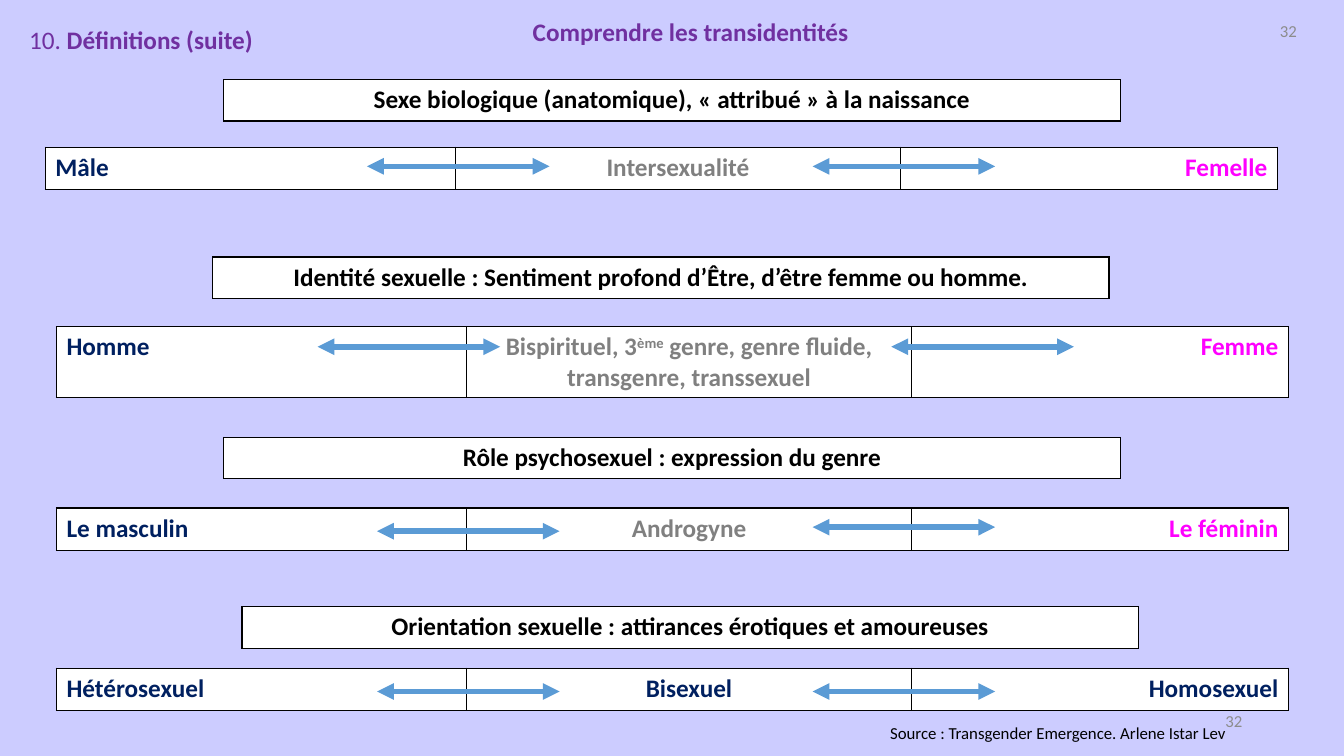
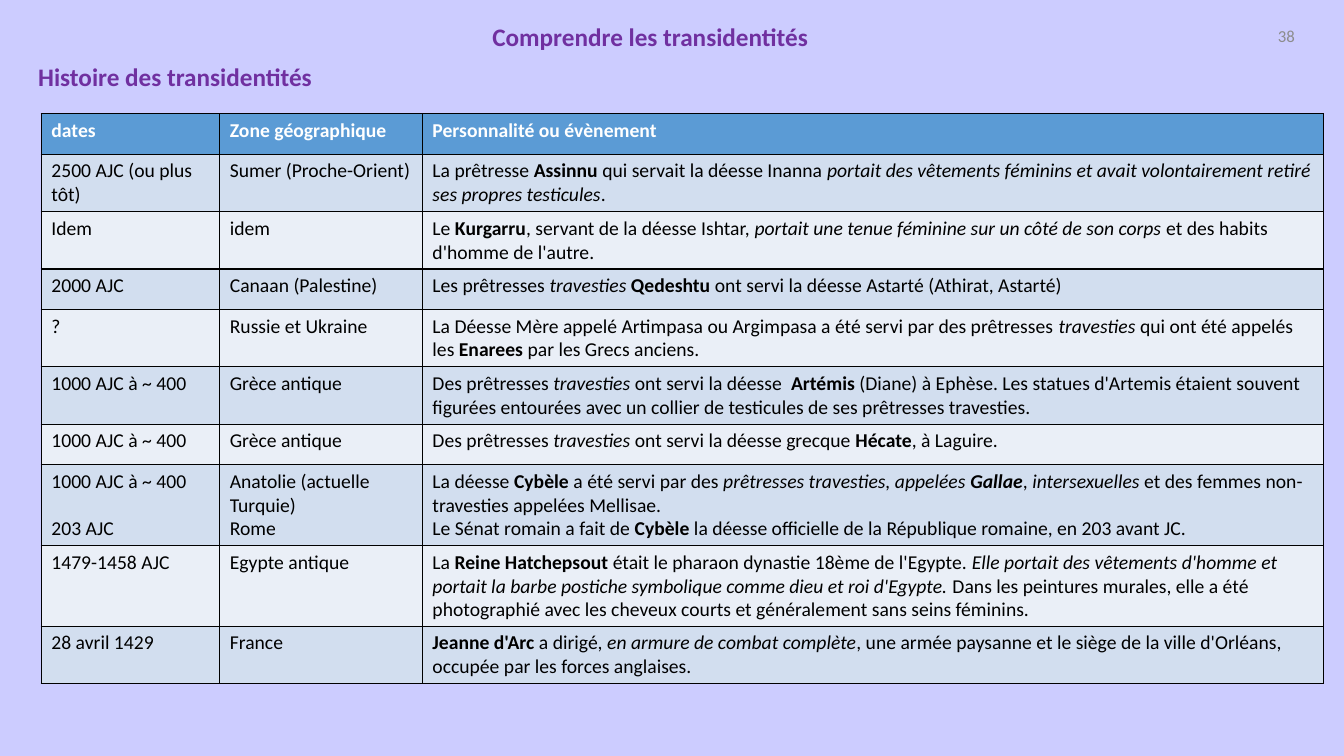
from dataclasses import dataclass

from lxml import etree
from pptx import Presentation
from pptx.dml.color import RGBColor
from pptx.enum.shapes import MSO_CONNECTOR
from pptx.enum.text import MSO_ANCHOR, PP_ALIGN
from pptx.oxml.ns import qn
from pptx.util import Inches, Pt

LEFT, CENTER, RIGHT = PP_ALIGN.LEFT, PP_ALIGN.CENTER, PP_ALIGN.RIGHT
TOP, MIDDLE = MSO_ANCHOR.TOP, MSO_ANCHOR.MIDDLE
STRAIGHT = MSO_CONNECTOR.STRAIGHT


@dataclass(frozen=True)
class Theme:
    font: str = "Calibri"
    background: str = "CCCCFF"
    title: str = "7030A0"
    number: str = "8C8C8C"
    ink: str = "000000"
    paper: str = "FFFFFF"
    navy: str = "002060"
    grey: str = "808080"
    pink: str = "FF00FF"
    blue: str = "5B9BD5"
    stripes: tuple = ("D2DEEF", "EAEFF7")
    heading_size: int = 18
    table_size: int = 14
    small_size: int = 12
    border: int = 1
    arrow: int = 4


THEME = Theme()

# In all texts: *bold*, _italic_, ^superscript^
DECK_TITLE = "*Comprendre les transidentités*"

SCALE_COLUMNS = (4.07, 4.41, 3.74)
HEADING_WIDTH, HEADING_HEIGHT = 8.89, 0.41
ARROW_LENGTH = 1.81
GENDERED = (THEME.navy, THEME.grey, THEME.pink)
NEUTRAL = (THEME.navy,) * 3

# heading, its left and top; scale left, top, height; labels, colours; arrow starts
SCALES = [
    ("Sexe biologique (anatomique), « attribué » à la naissance", 2.22, 0.79,
     0.45, 1.46, 0.42, ("Mâle", "Intersexualité", "Femelle"), GENDERED,
     [(3.64, 1.65), (8.06, 1.65)]),
    ("Identité sexuelle : Sentiment profond d’Être, d’être femme ou homme.", 2.11, 2.55,
     0.56, 3.24, 0.7,
     ("Homme", "Bispirituel, 3^ème^ genre, genre fluide, transgenre, transsexuel", "Femme"),
     GENDERED, [(3.15, 3.44), (8.84, 3.44)]),
    ("Rôle psychosexuel : expression du genre", 2.22, 4.34,
     0.56, 5.04, 0.42, ("Le masculin", "Androgyne", "Le féminin"), GENDERED,
     [(3.74, 5.27), (8.06, 5.23)]),
    ("Orientation sexuelle : attirances érotiques et amoureuses", 2.4, 6.02,
     0.56, 6.63, 0.42, ("Hétérosexuel", "Bisexuel", "Homosexuel"), NEUTRAL,
     [(3.74, 6.86), (8.06, 6.86)]),
]

HISTORY_COLUMNS = (1.77, 2.01, 8.94)
HISTORY_HEADER = ("*dates*", "*Zone géographique*", "*Personnalité ou évènement*")
ONE_LINE, TWO_LINES, THREE_LINES = 0.4, 0.57, 0.8
HISTORY = [
    (TWO_LINES, "2500 AJC (ou plus tôt)", "Sumer (Proche-Orient)",
     "La prêtresse *Assinnu* qui servait la déesse Inanna _portait des vêtements féminins "
     "et avait volontairement retiré ses propres testicules_."),
    (TWO_LINES, "Idem", "idem",
     "Le *Kurgarru*, servant de la déesse Ishtar, _portait une tenue féminine sur un côté "
     "de son corps _et des habits d'homme de l'autre."),
    (ONE_LINE, "2000 AJC", "Canaan (Palestine)",
     "Les prêtresses _travesties _*Qedeshtu* ont servi la déesse Astarté (Athirat, Astarté)"),
    (TWO_LINES, "?", "Russie et Ukraine",
     "La Déesse Mère appelé Artimpasa ou Argimpasa a été servi par des prêtresses "
     "_travesties_ qui ont été appelés les *Enarees* par les Grecs anciens."),
    (TWO_LINES, "1000 AJC à ~ 400", "Grèce antique",
     "Des prêtresses _travesties_ ont servi la déesse  *Artémis* (Diane) à Ephèse. Les "
     "statues d'Artemis étaient souvent figurées entourées avec un collier de testicules "
     "de ses prêtresses travesties."),
    (ONE_LINE, "1000 AJC à ~ 400", "Grèce antique",
     "Des prêtresses _travesties_ ont servi la déesse grecque *Hécate*, à Laguire."),
    (THREE_LINES, "1000 AJC à ~ 400\n203 AJC", "Anatolie (actuelle Turquie)\nRome",
     "La déesse *Cybèle* a été servi par des _prêtresses travesties, appelées *Gallae*_, "
     "_intersexuelles_ et des femmes non-travesties appelées Mellisae.\n"
     "Le Sénat romain a fait de *Cybèle* la déesse officielle de la République romaine, "
     "en 203 avant JC."),
    (THREE_LINES, "1479-1458 AJC", "Egypte antique",
     "La *Reine Hatchepsout *était le pharaon dynastie 18ème de l'Egypte. _Elle portait "
     "des vêtements d'homme et portait la barbe postiche symbolique comme dieu et roi "
     "d'Egypte. _Dans les peintures murales, elle a été photographié avec les cheveux "
     "courts et généralement sans seins féminins."),
    (TWO_LINES, "28 avril 1429", "France",
     "*Jeanne d'Arc *a dirigé, _en armure de combat complète_, une armée paysanne et le "
     "siège de la ville d'Orléans, occupée par les forces anglaises."),
]


def rgb(color):
    return RGBColor.from_string(color)


def split_marks(text):
    """Yield each stretch of text with the set of marks open around it."""
    marks, stretch = set(), ""
    for letter in text:
        if letter in "*_^":
            if stretch:
                yield stretch, set(marks)
            marks ^= {letter}
            stretch = ""
        else:
            stretch += letter
    if stretch:
        yield stretch, marks


def write(frame, text, *, size=THEME.heading_size, color=THEME.ink, align=LEFT, gap=0):
    """Fill a text frame; gap is the space in points between paragraphs."""
    for index, line in enumerate(text.split("\n")):
        para = frame.add_paragraph() if index else frame.paragraphs[0]
        para.alignment = align
        if index and gap:
            para.space_before = Pt(gap)
        for stretch, marks in split_marks(line):
            span = para.add_run()
            span.text = stretch
            font = span.font
            font.name, font.size = THEME.font, Pt(size)
            font.color.rgb = rgb(color)
            font.bold, font.italic = "*" in marks, "_" in marks
            if "^" in marks:
                span._r.get_or_add_rPr().set("baseline", "30000")


def add_text(page, text, left, top, width, height=0.4, *, anchor=TOP, wrap=True, **style):
    box = page.shapes.add_textbox(Inches(left), Inches(top), Inches(width), Inches(height))
    box.text_frame.word_wrap = wrap
    box.text_frame.vertical_anchor = anchor
    write(box.text_frame, text, **style)


def add_number(page, number, left, top, width):
    add_text(page, number, left, top, width, anchor=MIDDLE, size=THEME.small_size,
             color=THEME.number, align=RIGHT)


def add_title(page, left, top, width):
    add_text(page, DECK_TITLE, left, top, width, color=THEME.title, align=CENTER)


def add_grid(page, left, top, columns, heights):
    """Add an empty table with the given column widths and row heights."""
    table = page.shapes.add_table(
        len(heights), len(columns), Inches(left), Inches(top),
        Inches(sum(columns)), Inches(sum(heights))).table
    for column, width in zip(table.columns, columns):
        column.width = Inches(width)
    for row, height in zip(table.rows, heights):
        row.height = Inches(height)
    return table


def fill_cell(cell, text, fill, **style):
    properties = cell._tc.get_or_add_tcPr()
    for side in ("a:lnL", "a:lnR", "a:lnT", "a:lnB"):
        line = etree.SubElement(properties, qn(side), w=str(Pt(THEME.border)))
        solid = etree.SubElement(line, qn("a:solidFill"))
        etree.SubElement(solid, qn("a:srgbClr"), val=THEME.ink)
    cell.fill.solid()
    cell.fill.fore_color.rgb = rgb(fill)
    write(cell.text_frame, text, **style)


def add_double_arrow(page, left, top):
    arrow = page.shapes.add_connector(
        STRAIGHT, Inches(left), Inches(top), Inches(left + ARROW_LENGTH), Inches(top))
    arrow.line.color.rgb = rgb(THEME.blue)
    arrow.line.width = Pt(THEME.arrow)
    line = arrow.line._get_or_add_ln()
    for end in ("a:headEnd", "a:tailEnd"):
        etree.SubElement(line, qn(end), type="triangle")
    etree.SubElement(arrow._element.spPr, qn("a:effectLst"))


def build_definitions(page):
    add_number(page, "32", 9.42, 6.95, 3)
    add_number(page, "32", 11.74, 0.11, 1.22)
    add_title(page, 4.96, 0.11, 3.78)
    add_text(page, "10. *Définitions (suite)*", 0.19, 0.19, 2.44, wrap=False,
             color=THEME.title)
    for (heading, heading_left, heading_top, left, top, height,
         labels, colors, arrows) in SCALES:
        banner = add_grid(page, heading_left, heading_top, [HEADING_WIDTH], [HEADING_HEIGHT])
        fill_cell(banner.cell(0, 0), f"*{heading}*", THEME.paper, align=CENTER)
        scale = add_grid(page, left, top, SCALE_COLUMNS, [height])
        for column, align in enumerate((LEFT, CENTER, RIGHT)):
            fill_cell(scale.cell(0, column), f"*{labels[column]}*", THEME.paper,
                      color=colors[column], align=align)
        for start in arrows:
            add_double_arrow(page, *start)
    add_text(page, "Source : Transgender Emergence. Arlene Istar Lev", 8.73, 7.12, 3.72, 0.3,
             size=THEME.small_size)


def build_history(page):
    add_number(page, "38", 12.22, 0.16, 0.72)
    add_title(page, 4.75, 0.16, 3.4)
    add_text(page, "*Histoire des transidentités*", 0.28, 0.56, 6.42, color=THEME.title)
    heights = [ONE_LINE] + [row[0] for row in HISTORY]
    table = add_grid(page, 0.41, 1.13, HISTORY_COLUMNS, heights)
    for column, label in enumerate(HISTORY_HEADER):
        fill_cell(table.cell(0, column), label, THEME.blue, size=THEME.table_size,
                  color=THEME.paper)
    for index, (_, *texts) in enumerate(HISTORY):
        for column, text in enumerate(texts):
            # The second date lines up with the last line of its row
            gap = 17 if column == 0 else 0
            fill_cell(table.cell(index + 1, column), text, THEME.stripes[index % 2],
                      size=THEME.table_size, gap=gap)


def main():
    deck = Presentation()
    deck.slide_width, deck.slide_height = Inches(13.33), Inches(7.5)
    background = deck.slide_master.background.fill
    background.solid()
    background.fore_color.rgb = rgb(THEME.background)
    blank = deck.slide_layouts[6]
    for build in (build_definitions, build_history):
        build(deck.slides.add_slide(blank))
    deck.save("out.pptx")


if __name__ == "__main__":
    main()
